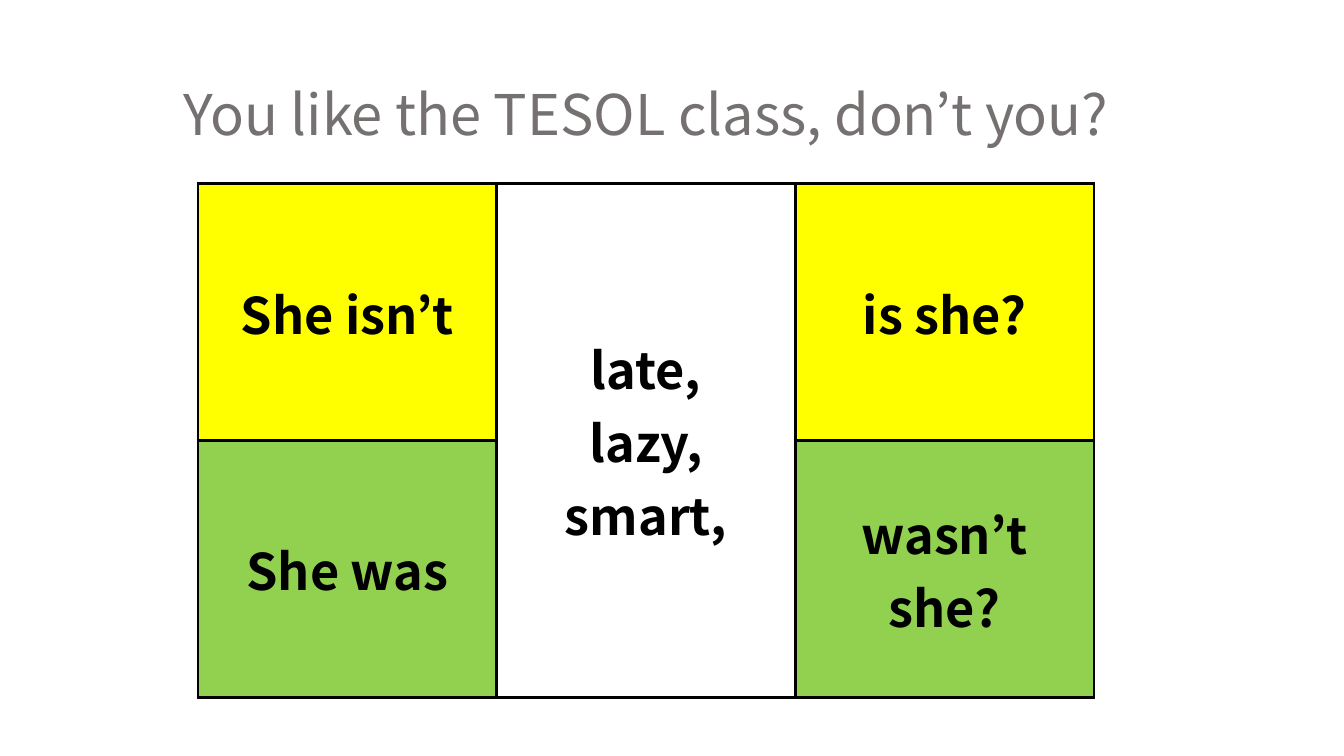
from lxml import etree
from pptx import Presentation
from pptx.dml.color import RGBColor
from pptx.enum.text import MSO_ANCHOR as Anchor, MSO_AUTO_SIZE as AutoSize, PP_ALIGN as Align
from pptx.oxml.ns import qn
from pptx.util import Cm, Pt

FONT = "Noto Sans CJK KR"
BLACK = RGBColor(0x00, 0x00, 0x00)
GRAY = RGBColor(0x76, 0x71, 0x71)
WHITE = RGBColor(0xFF, 0xFF, 0xFF)
YELLOW = RGBColor(0xFF, 0xFF, 0x00)
GREEN = RGBColor(0x92, 0xD0, 0x50)

QUESTION = "You like the TESOL class, don’t you?"
# Each cell: its lines and its fill; the middle column is one merged cell.
TAG_GRID = [
    [(["She isn’t"], YELLOW), (["late,", "lazy,", "smart,"], WHITE), (["is she?"], YELLOW)],
    [(["She was"], GREEN), ([], WHITE), (["wasn’t she?"], GREEN)],
]


def write_lines(frame, lines, size, color, bold=False):
    for index, line in enumerate(lines):
        paragraph = frame.add_paragraph() if index else frame.paragraphs[0]
        paragraph.alignment = Align.CENTER
        run = paragraph.add_run()
        run.text = line
        run.font.name = FONT
        run.font.size = Pt(size)
        run.font.bold = bold
        run.font.color.rgb = color


def outline_cell(cell, color, width):
    """Draw a solid border on all four sides; call before filling the cell."""
    properties = cell._tc.get_or_add_tcPr()
    for side in ("a:lnL", "a:lnR", "a:lnT", "a:lnB"):
        border = etree.SubElement(properties, qn(side), w=str(width))
        fill = etree.SubElement(border, qn("a:solidFill"))
        etree.SubElement(fill, qn("a:srgbClr"), val=str(color))


def add_question(slide, left, top, width, height):
    question = slide.shapes.add_textbox(left, top, width, height)
    frame = question.text_frame
    frame.word_wrap = False
    frame.auto_size = AutoSize.SHAPE_TO_FIT_TEXT
    write_lines(frame, [QUESTION], 40, GRAY)


def add_tag_grid(slide, left, top, width, height):
    rows, columns = len(TAG_GRID), len(TAG_GRID[0])
    grid = slide.shapes.add_table(rows, columns, left, top, width, height).table
    grid.first_row = False
    grid.horz_banding = False
    for column in grid.columns:
        column.width = width // columns
    for row in grid.rows:
        row.height = height // rows

    for row_index, row_cells in enumerate(TAG_GRID):
        for column_index, (lines, color) in enumerate(row_cells):
            cell = grid.cell(row_index, column_index)
            outline_cell(cell, BLACK, Pt(2.25))
            cell.fill.solid()
            cell.fill.fore_color.rgb = color
            cell.vertical_anchor = Anchor.MIDDLE
            write_lines(cell.text_frame, lines, 36, BLACK, bold=True)
    grid.cell(0, 1).merge(grid.cell(rows - 1, 1))


def main():
    deck = Presentation()
    deck.slide_width, deck.slide_height = Cm(33.87), Cm(19.05)
    slide = deck.slides.add_slide(deck.slide_layouts[6])
    add_tag_grid(slide, Cm(4.99), Cm(4.63), Cm(22.58), Cm(12.94))
    add_question(slide, Cm(4.34), Cm(1.88), Cm(23.88), Cm(1.96))
    deck.save("out.pptx")


if __name__ == "__main__":
    main()
